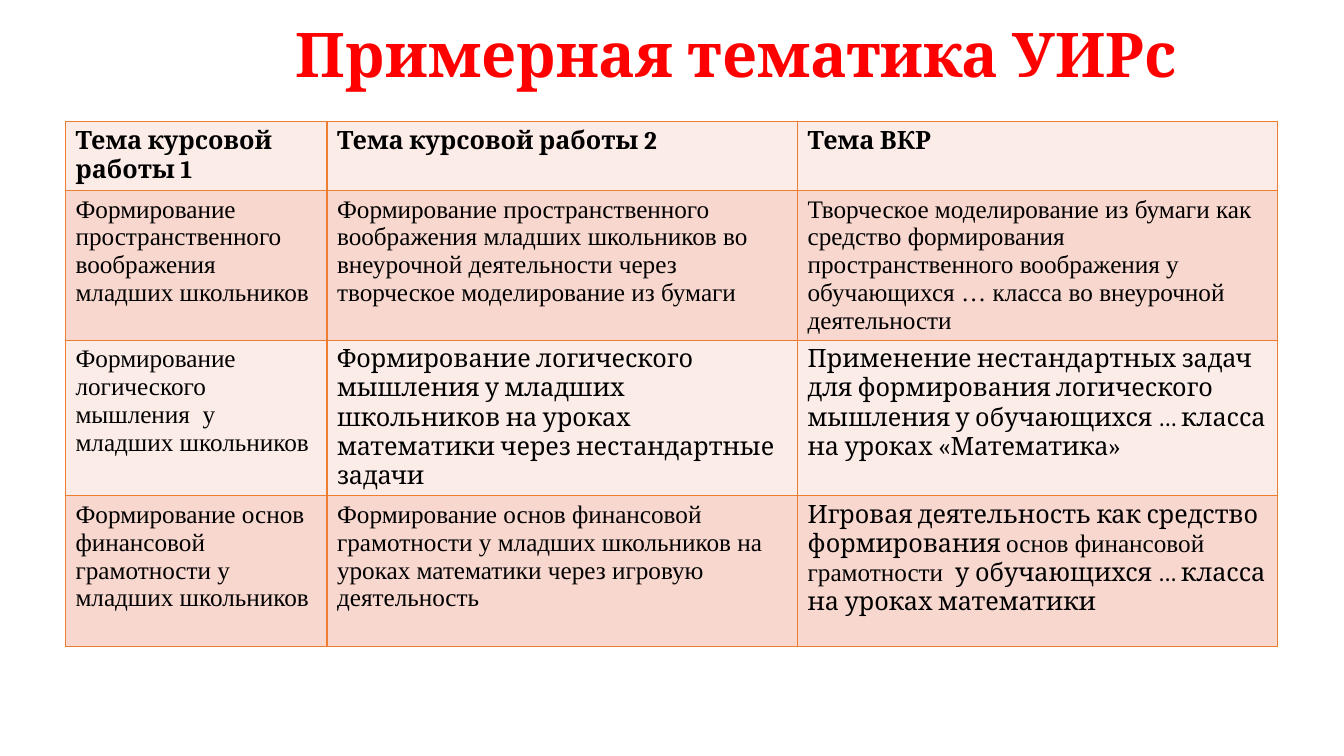
from lxml.etree import SubElement
from pptx import Presentation
from pptx.dml.color import RGBColor
from pptx.enum.text import MSO_ANCHOR, PP_ALIGN
from pptx.oxml import parse_xml
from pptx.oxml.ns import nsdecls
from pptx.util import Cm, Pt

SERIF = "Cambria"
TIMES = "Times New Roman"
RED = RGBColor(0xFF, 0x00, 0x00)
BLACK = RGBColor(0x00, 0x00, 0x00)
ORANGE = RGBColor(0xED, 0x7D, 0x31)
BANDS = [RGBColor(0xFC, 0xEC, 0xE8), RGBColor(0xF8, 0xD7, 0xCE)]

HEADING = "Примерная тематика УИРс"
TOPICS = [
    [
        [("Тема курсовой работы 1", SERIF)],
        [("Тема курсовой работы 2", SERIF)],
        [("Тема ВКР", SERIF)],
    ],
    [
        [("Формирование пространственного воображения младших школьников", TIMES)],
        [("Формирование пространственного воображения младших школьников во "
          "внеурочной деятельности через творческое моделирование из бумаги", TIMES)],
        [("Творческое моделирование из бумаги как средство формирования "
          "пространственного воображения у обучающихся … класса во внеурочной "
          "деятельности", TIMES)],
    ],
    [
        [("Формирование логического мышления  у младших школьников", TIMES)],
        [("Формирование логического мышления у младших школьников на уроках "
          "математики через нестандартные задачи", SERIF)],
        [("Применение нестандартных задач для формирования логического мышления "
          "у обучающихся … класса на уроках «Математика»", SERIF)],
    ],
    [
        [("Формирование основ финансовой грамотности у младших школьников", TIMES)],
        [("Формирование основ финансовой грамотности у младших школьников на "
          "уроках математики через игровую деятельность", TIMES)],
        [("Игровая деятельность как средство формирования ", SERIF),
         ("основ финансовой грамотности ", TIMES),
         (" у обучающихся … класса на уроках математики", SERIF)],
    ],
]
COLUMN_WIDTHS = [6.59, 11.86, 12.1]
ROW_HEIGHTS = [1.74, 3.77, 3.92, 3.8]


def add_run(paragraph, wording, font_name, size, color, bold):
    run = paragraph.add_run()
    run.text = wording
    run.font.name = font_name
    run.font.size = Pt(size)
    run.font.color.rgb = color
    run.font.bold = bold


def add_borders(cell):
    properties = cell._tc.get_or_add_tcPr()
    for position, side in enumerate(["lnL", "lnR", "lnT", "lnB"]):
        border = parse_xml(
            f'<a:{side} {nsdecls("a")} w="{Pt(1)}"><a:solidFill>'
            f'<a:srgbClr val="{ORANGE}"/></a:solidFill></a:{side}>'
        )
        properties.insert(position, border)


def add_heading(slide):
    heading = slide.shapes.title
    heading.left, heading.top = Cm(4.95), Cm(0.33)
    heading.width, heading.height = Cm(27.25), Cm(2.24)
    heading.text_frame.vertical_anchor = MSO_ANCHOR.MIDDLE
    paragraph = heading.text_frame.paragraphs[0]
    paragraph.alignment = PP_ALIGN.CENTER
    paragraph.line_spacing = 0.9
    add_run(paragraph, HEADING, SERIF, 44, RED, True)


def add_topics(slide):
    topics = slide.shapes.add_table(
        len(ROW_HEIGHTS), len(COLUMN_WIDTHS), Cm(1.65), Cm(3.06),
        Cm(sum(COLUMN_WIDTHS)), Cm(sum(ROW_HEIGHTS)),
    ).table
    for column, width in zip(topics.columns, COLUMN_WIDTHS):
        column.width = Cm(width)
    for row, height in zip(topics.rows, ROW_HEIGHTS):
        row.height = Cm(height)
    for row_index, topic_row in enumerate(TOPICS):
        for column_index, pieces in enumerate(topic_row):
            cell = topics.cell(row_index, column_index)
            cell.fill.solid()
            cell.fill.fore_color.rgb = BANDS[row_index % 2]
            add_borders(cell)
            for wording, font_name in pieces:
                add_run(cell.text_frame.paragraphs[0], wording, font_name,
                        18, BLACK, row_index == 0)


def main():
    presentation = Presentation()
    presentation.slide_width, presentation.slide_height = Cm(33.87), Cm(19.05)
    slide = presentation.slides.add_slide(presentation.slide_layouts[5])
    add_heading(slide)
    add_topics(slide)
    presentation.save("out.pptx")


if __name__ == "__main__":
    main()
